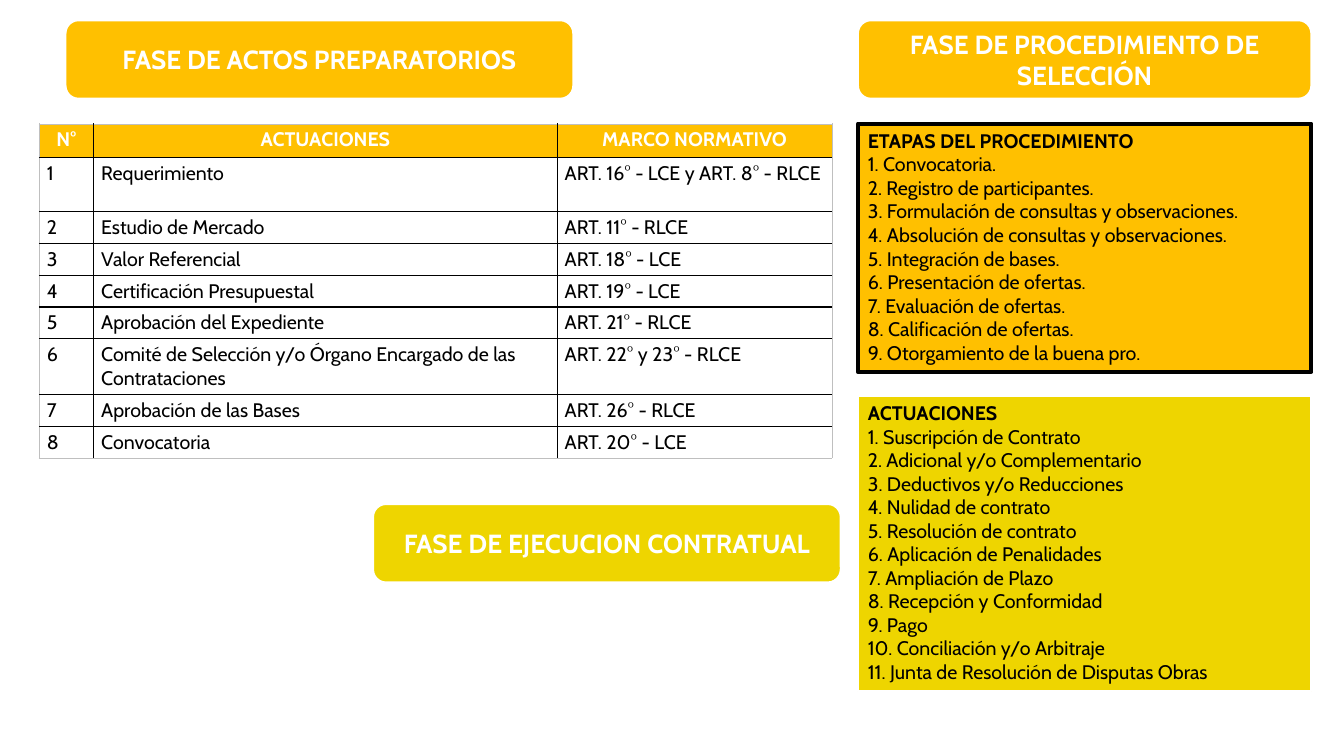
from lxml import etree
from pptx import Presentation
from pptx import util as u
from pptx.dml.color import RGBColor
from pptx.enum import shapes, text
from pptx.oxml.ns import qn

COLORS = {"amber": "FFC000", "lime": "EED500", "white": "FFFFFF",
          "black": "000000", "grey": "BFBFBF"}

PHASES = [
    ("FASE DE ACTOS PREPARATORIOS", (1.65, 0.51, 12.8, 1.98), "amber"),
    ("FASE DE PROCEDIMIENTO DE SELECCIÓN", (21.62, 0.51, 11.43, 1.98), "amber"),
    ("FASE DE EJECUCION CONTRATUAL", (9.4, 12.7, 11.79, 1.98), "lime"),
]
STAGES = [
    "Convocatoria.", "Registro de participantes.",
    "Formulación de consultas y observaciones.",
    "Absolución de consultas y observaciones.", "Integración de bases.",
    "Presentación de ofertas.", "Evaluación de ofertas.",
    "Calificación de ofertas.", "Otorgamiento de la buena pro.",
]
CONTRACT_ACTIONS = [
    "Suscripción de Contrato", "Adicional y/o Complementario",
    "Deductivos y/o Reducciones", "Nulidad de contrato",
    "Resolución de contrato", "Aplicación de Penalidades",
    "Ampliación de Plazo", "Recepción y Conformidad", "Pago",
    "Conciliación y/o Arbitraje", "Junta de Resolución de Disputas Obras",
]
HEADINGS = ("N°", "ACTUACIONES", "MARCO NORMATIVO")
PREPARATION = [
    ("Requerimiento", "ART. 16° - LCE y ART. 8° - RLCE"),
    ("Estudio de Mercado", "ART. 11° - RLCE"),
    ("Valor Referencial", "ART. 18° - LCE"),
    ("Certificación Presupuestal", "ART. 19° - LCE"),
    ("Aprobación del Expediente", "ART. 21° - RLCE"),
    ("Comité de Selección y/o Órgano Encargado de las Contrataciones",
     "ART. 22° y 23° - RLCE"),
    ("Aprobación de las Bases", "ART. 26° - RLCE"),
    ("Convocatoria", "ART. 20° - LCE"),
]
COLUMN_WIDTHS = (1.37, 11.68, 6.93)
ROW_HEIGHTS = (0.84, 1.37, 0.79, 0.79, 0.79, 0.79, 1.37, 0.79, 0.79)


def rgb(color):
    return RGBColor.from_string(COLORS[color])


def apply(target, values):
    for name, value in values.items():
        setattr(target, name, value)


class PhaseSlide:
    font_name = "Cabin"
    body_size = 14
    banner_size = 18.7

    def __init__(self, deck):
        self.slide = deck.slides.add_slide(deck.slide_layouts[6])

    def add_words(self, paragraph, words, size, color="black", bold=False,
                  align=text.PP_ALIGN.LEFT):
        paragraph.alignment = align
        run = paragraph.add_run()
        run.text = words
        apply(run.font, {"name": self.font_name, "size": u.Pt(size), "bold": bold})
        run.font.color.rgb = rgb(color)

    def block(self, kind, box, fill, line, line_width):
        block = self.slide.shapes.add_shape(kind, *map(u.Cm, box))
        block.shadow.inherit = False
        block.fill.solid()
        block.fill.fore_color.rgb = rgb(fill)
        block.line.color.rgb = rgb(line)
        block.line.width = u.Pt(line_width)
        block.text_frame.word_wrap = True
        return block

    def banner(self, phase, box, fill):
        banner = self.block(shapes.MSO_SHAPE.ROUNDED_RECTANGLE, box, fill, "white", 1.5)
        banner.text_frame.vertical_anchor = text.MSO_ANCHOR.MIDDLE
        self.add_words(banner.text_frame.paragraphs[0], phase, self.banner_size,
                       "white", True, text.PP_ALIGN.CENTER)

    def numbered_panel(self, heading, items, box, fill, line, line_width):
        panel = self.block(shapes.MSO_SHAPE.RECTANGLE, box, fill, line, line_width)
        frame = panel.text_frame
        apply(frame, {"vertical_anchor": text.MSO_ANCHOR.TOP,
                      "auto_size": text.MSO_AUTO_SIZE.SHAPE_TO_FIT_TEXT})
        self.add_words(frame.paragraphs[0], heading, self.body_size, bold=True,
                       align=text.PP_ALIGN.JUSTIFY)
        for number, item in enumerate(items, 1):
            self.add_words(frame.add_paragraph(), f"{number}. {item}", self.body_size)

    def cell_border(self, cell, side, color, width):
        line = etree.SubElement(cell._tc.get_or_add_tcPr(), qn(f"a:ln{side}"),
                                w=str(u.Pt(width)))
        solid = etree.SubElement(line, qn("a:solidFill"))
        etree.SubElement(solid, qn("a:srgbClr"), val=COLORS[color])

    def table(self, rows, left, top):
        """Draw rows with a filled header, black inner rules and a grey frame."""
        size = (left, top, sum(COLUMN_WIDTHS), sum(ROW_HEIGHTS))
        table = self.slide.shapes.add_table(
            len(rows), len(HEADINGS), *map(u.Cm, size)).table
        for column, width in zip(table.columns, COLUMN_WIDTHS):
            column.width = u.Cm(width)
        for row, height in zip(table.rows, ROW_HEIGHTS):
            row.height = u.Cm(height)
        last_row, last_column = len(rows) - 1, len(HEADINGS) - 1
        for r, values in enumerate(rows):
            for c, words in enumerate(values):
                cell = table.cell(r, c)
                apply(cell, {"margin_left": u.Cm(0.19), "margin_right": u.Cm(0.19),
                             "margin_top": u.Cm(0.1), "margin_bottom": u.Cm(0.1)})
                outer_sides = {"L": c == 0, "R": c == last_column,
                               "T": r == 0, "B": r == last_row}
                for side, outer in outer_sides.items():
                    self.cell_border(cell, side, "grey" if outer else "black",
                                     0.5 if outer else 1)
                paragraph = cell.text_frame.paragraphs[0]
                if r == 0:
                    cell.fill.solid()
                    cell.fill.fore_color.rgb = rgb("amber")
                    self.add_words(paragraph, words, self.body_size, "white", True,
                                   text.PP_ALIGN.CENTER)
                else:
                    cell.fill.background()
                    self.add_words(paragraph, words, self.body_size)


def main():
    deck = Presentation()
    apply(deck, {"slide_width": u.Cm(33.87), "slide_height": u.Cm(19.05)})
    page = PhaseSlide(deck)
    for phase in PHASES:
        page.banner(*phase)
    numbered = [(str(n), *action) for n, action in enumerate(PREPARATION, 1)]
    page.table([HEADINGS, *numbered], 0.99, 3.12)
    page.numbered_panel("ETAPAS DEL PROCEDIMIENTO", STAGES,
                        (21.62, 3.12, 11.43, 6.25), "amber", "black", 3)
    page.numbered_panel("ACTUACIONES", CONTRACT_ACTIONS,
                        (21.62, 9.98, 11.43, 7.44), "lime", "white", 1.5)
    deck.save("out.pptx")


if __name__ == "__main__":
    main()
